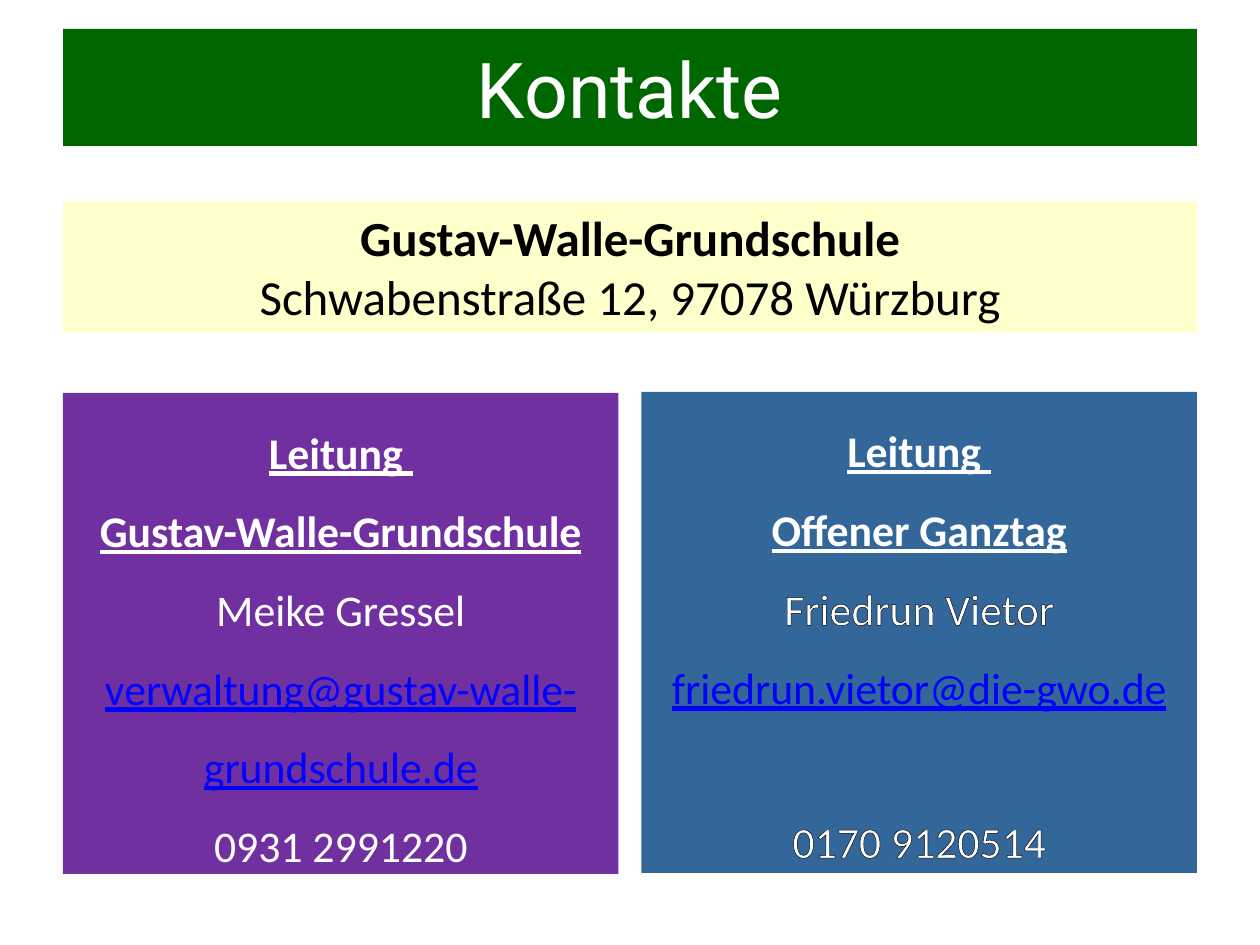
from dataclasses import dataclass

from lxml.etree import SubElement
from pptx import Presentation
from pptx.dml.color import RGBColor
from pptx.enum.shapes import MSO_SHAPE
from pptx.enum.text import MSO_ANCHOR as Anchor, MSO_AUTO_SIZE as AutoSize, PP_ALIGN as Align
from pptx.oxml.ns import qn
from pptx.util import Cm, Pt

WHITE, BLACK, LINK_BLUE = "FFFFFF", "000000", "0000FF"
MARGIN, FULL_WIDTH, CARD_WIDTH, CARD_HEIGHT = 1.27, 22.86, 11.2, 9.7


@dataclass(frozen=True)
class Line:
    text: str
    size: float = 25
    color: str = WHITE
    font: str = "Calibri"
    bold: bool = False
    underline: bool = False
    outlined: bool = False
    space_before: float = 0


@dataclass(frozen=True)
class Box:
    left: float
    top: float
    width: float
    height: float
    fill: str
    lines: tuple[Line, ...]
    spacing: float = 1.0
    anchor: Anchor = Anchor.MIDDLE
    auto_size: AutoSize = AutoSize.NONE


def heading(text: str) -> Line:
    return Line(text, bold=True, underline=True)


def email(address: str) -> Line:
    return Line(address, color=LINK_BLUE, underline=True)


TITLE = Box(MARGIN, 0.58, FULL_WIDTH, 2.36, "006600",
            (Line("Kontakte", size=44, font="Roboto"),))
BOXES = (
    Box(MARGIN, 4.06, FULL_WIDTH, 2.64, "FFFFCC", (
        Line("Gustav-Walle-Grundschule", size=28, color=BLACK, bold=True),
        Line("Schwabenstraße 12, 97078 Würzburg", size=28, color=BLACK),
    ), anchor=Anchor.TOP, auto_size=AutoSize.SHAPE_TO_FIT_TEXT),
    Box(MARGIN, 7.92, CARD_WIDTH, CARD_HEIGHT, "7030A0", (
        heading("Leitung "),
        heading("Gustav-Walle-Grundschule"),
        Line("Meike Gressel"),
        email("verwaltung@gustav-walle-grundschule.de"),
        Line("0931 2991220"),
    ), spacing=1.5, anchor=Anchor.TOP, auto_size=AutoSize.SHAPE_TO_FIT_TEXT),
    Box(MARGIN + FULL_WIDTH - CARD_WIDTH, 7.9, CARD_WIDTH, CARD_HEIGHT, "336699", (
        heading("Leitung "),
        heading("Offener Ganztag"),
        Line("Friedrun Vietor", outlined=True),
        email("friedrun.vietor@die-gwo.de"),
        Line("0170 9120514", outlined=True, space_before=43),
    ), spacing=1.5),
)


def rgb(color: str) -> RGBColor:
    return RGBColor.from_string(color)


def outline_text(run) -> None:
    """Give the letters a thin dotted black contour."""
    properties = run.font._element
    contour = SubElement(properties, qn("a:ln"), w=str(Pt(0.75)))
    fill = SubElement(contour, qn("a:solidFill"))
    SubElement(fill, qn("a:srgbClr"), val=BLACK)
    SubElement(contour, qn("a:prstDash"), val="sysDot")
    properties.insert(0, contour)


def write_line(paragraph, line: Line, spacing: float) -> None:
    paragraph.alignment = Align.CENTER
    paragraph.line_spacing = spacing
    paragraph.space_before = Pt(line.space_before)
    run = paragraph.add_run()
    run.text = line.text
    font = run.font
    font.name, font.size = line.font, Pt(line.size)
    font.bold, font.underline = line.bold, line.underline
    font.color.rgb = rgb(line.color)
    if line.outlined:
        outline_text(run)


def format_box(shape, box: Box) -> None:
    shape.left, shape.top = Cm(box.left), Cm(box.top)
    shape.width, shape.height = Cm(box.width), Cm(box.height)
    shape.fill.solid()
    shape.fill.fore_color.rgb = rgb(box.fill)
    shape.line.fill.background()
    frame = shape.text_frame
    frame.word_wrap = True
    frame.auto_size = box.auto_size
    frame.vertical_anchor = box.anchor
    for index, line in enumerate(box.lines):
        paragraph = frame.add_paragraph() if index else frame.paragraphs[0]
        write_line(paragraph, line, box.spacing)


def main() -> None:
    presentation = Presentation()
    presentation.slide_width, presentation.slide_height = Cm(25.4), Cm(19.05)
    slide = presentation.slides.add_slide(presentation.slide_layouts.get_by_name("Title Only"))
    format_box(slide.shapes.title, TITLE)
    for box in BOXES:
        shape = slide.shapes.add_shape(MSO_SHAPE.RECTANGLE, 0, 0, 0, 0)
        shape.shadow.inherit = False
        format_box(shape, box)
    presentation.save("out.pptx")


if __name__ == "__main__":
    main()
